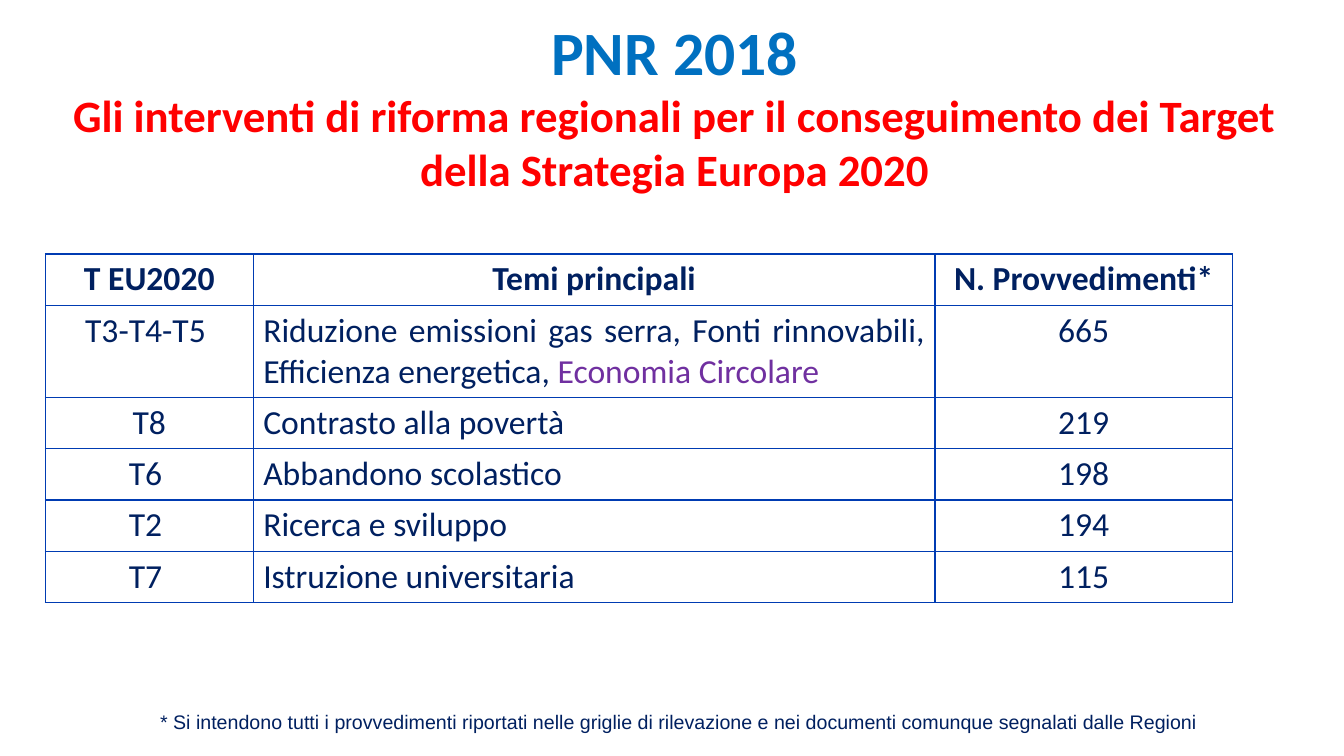
from lxml import etree
from pptx import Presentation
from pptx.dml.color import RGBColor
from pptx.enum import text
from pptx.oxml import ns
from pptx.util import Pt

NAVY, EDGE = "002060", "003BB2"
LEFT, MID, FULL = text.PP_ALIGN.LEFT, text.PP_ALIGN.CENTER, text.PP_ALIGN.JUSTIFY

TITLE = [
    ("PNR 2018", 44, "0070C0"),
    ("Gli interventi di riforma regionali per il conseguimento dei Target della Strategia Europa 2020",
     32, "FF0000"),
]
HEAD = ("T EU2020", "Temi principali", "N. Provvedimenti*")
ROWS = [
    ("T3-T4-T5 ", "Riduzione emissioni gas serra, Fonti rinnovabili, Efficienza energetica, ", "665"),
    ("T8", "Contrasto alla povertà", "219"),
    ("T6 ", "Abbandono scolastico", "198"),
    ("T2 ", "Ricerca e sviluppo", "194"),
    ("T7 ", "Istruzione universitaria", "115"),
]
EXTRA = ("Economia Circolare", "7030A0")
NOTE = ("* Si intendono tutti i provvedimenti riportati nelle griglie di rilevazione "
        "e nei documenti comunque segnalati dalle Regioni")
WIDTHS = (148.5, 487, 212.5)
LINE, TALL = 36.6, 66


def paint(color, tone):
    color.rgb = RGBColor.from_string(tone)


def add_run(par, words, size, tone=NAVY, bold=False, face="Calibri"):
    run = par.add_run()
    run.text = words
    run.font.size = Pt(size)
    run.font.name = face
    run.font.bold = bold
    paint(run.font.color, tone)


def edge(cell):
    props = cell._tc.get_or_add_tcPr()
    for side in ("lnL", "lnR", "lnT", "lnB"):
        line = etree.SubElement(props, ns.qn("a:" + side), w=str(Pt(1)))
        fill = etree.SubElement(line, ns.qn("a:solidFill"))
        etree.SubElement(fill, ns.qn("a:srgbClr"), val=EDGE)
    cell.fill.background()


def add_title(slide):
    title = slide.shapes.title
    title.left, title.top, title.width, title.height = Pt(16), Pt(6.5), Pt(932), Pt(138)
    frame = title.text_frame
    frame.vertical_anchor = text.MSO_ANCHOR.TOP
    frame.auto_size = text.MSO_AUTO_SIZE.NONE
    for i, (words, size, tone) in enumerate(TITLE):
        par = frame.add_paragraph() if i else frame.paragraphs[0]
        par.alignment = MID
        add_run(par, words, size, tone, True)


def add_grid(slide):
    data = [HEAD] + ROWS
    tall = [TALL if row is ROWS[0] else LINE for row in data]
    table = slide.shapes.add_table(len(data), len(HEAD), Pt(32.4), Pt(181.4),
                                   Pt(sum(WIDTHS)), Pt(sum(tall))).table
    table.first_row = table.horz_banding = False
    for col, width in zip(table.columns, WIDTHS):
        col.width = Pt(width)
    for r, row in enumerate(data):
        table.rows[r].height = Pt(tall[r])
        for c, words in enumerate(row):
            cell = table.cell(r, c)
            edge(cell)
            par = cell.text_frame.paragraphs[0]
            par.alignment = LEFT if r and c == 1 else MID
            add_run(par, words, 24, bold=r == 0)
    par = table.cell(1, 1).text_frame.paragraphs[0]
    par.alignment = FULL
    add_run(par, EXTRA[0], 24, EXTRA[1])


def add_note(slide):
    frame = slide.shapes.add_textbox(Pt(107.3), Pt(503.3), Pt(773), Pt(24.5)).text_frame
    frame.word_wrap = True
    add_run(frame.paragraphs[0], NOTE, 14, face="Arial")


def main():
    deck = Presentation()
    deck.slide_width, deck.slide_height = Pt(960), Pt(540)
    slide = deck.slides.add_slide(deck.slide_layouts[5])
    add_title(slide)
    add_grid(slide)
    add_note(slide)
    deck.save("out.pptx")


if __name__ == "__main__":
    main()
